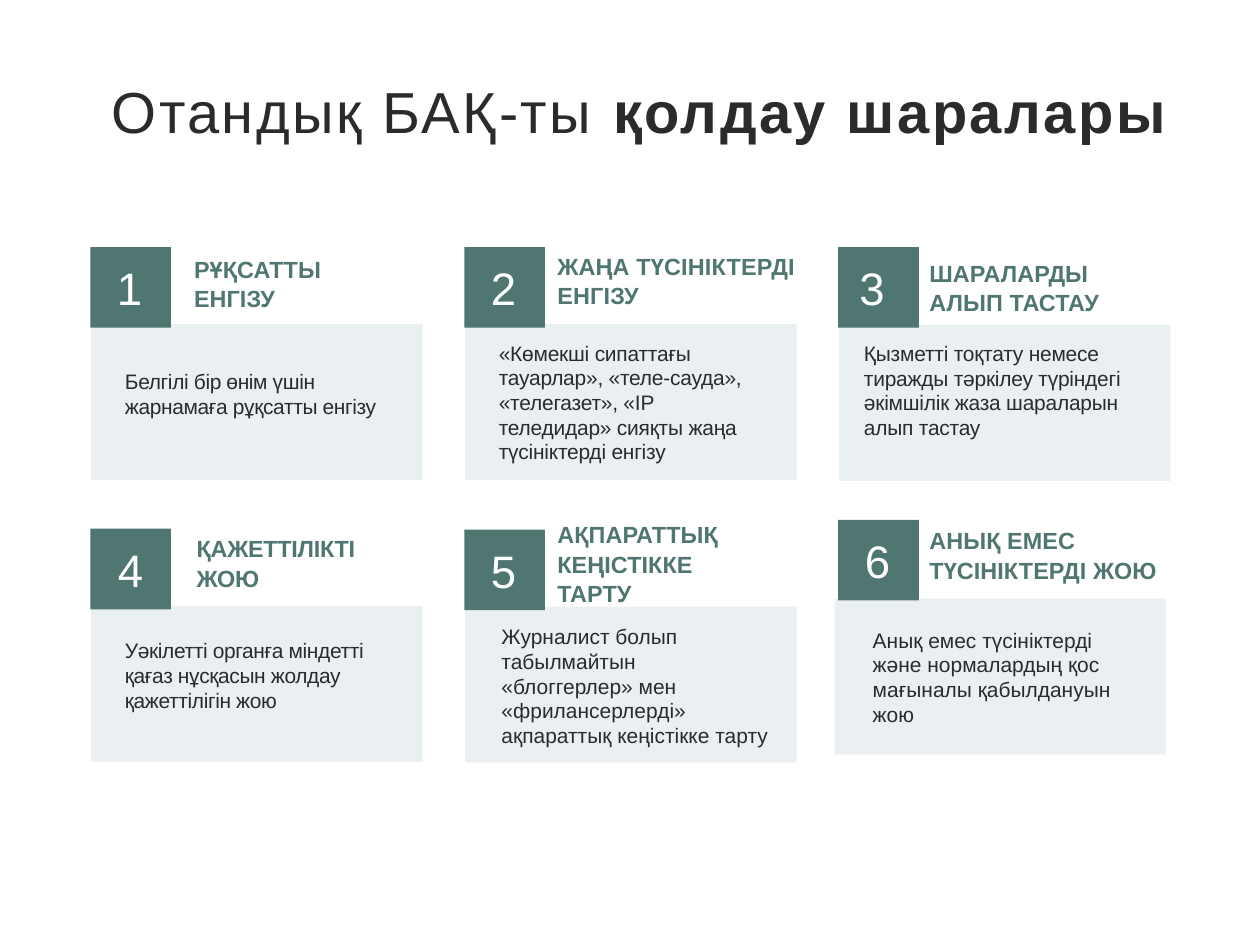
from pptx import Presentation
from pptx import util as u
from pptx.dml.color import RGBColor
from pptx.enum import shapes, text

PX = 9144
COLORS = {"panel": "EAEFF1", "accent": "4F7671", "ink": "292B2C", "white": "FFFFFF"}
SQUARE = 91
CARDS = [
    {"square": (102, 279), "panel": (103, 366), "digit": 30,
     "head": ("РҰҚСАТТЫ ЕНГІЗУ", 218, 286, 188, 67, 0.1),
     "body": ("Белгілі бір өнім үшін жарнамаға рұқсатты енгізу", 140, 417, 299, 56, -0.3)},
    {"square": (524, 279), "panel": (525, 366), "digit": 30,
     "head": ("ЖАҢА ТҮСІНІКТЕРДІ ЕНГІЗУ", 628, 283, 273, 67, 0.2),
     "body": ("«Көмекші сипаттағы тауарлар», «теле-сауда», «телегазет», «ІР теледидар» "
              "сияқты жаңа түсініктерді енгізу", 562, 385, 297, 140, -0.2)},
    {"square": (946, 279), "panel": (947, 367), "digit": 24,
     "head": ("ШАРАЛАРДЫ АЛЫП ТАСТАУ", 1048, 291, 213, 67, 0.1),
     "body": ("Қызметті тоқтату немесе тиражды тәркілеу түріндегі әкімшілік жаза "
              "шараларын алып тастау", 974, 385, 335, 112, -0.2)},
    {"square": (102, 597), "panel": (103, 684), "digit": 31,
     "head": ("ҚАЖЕТТІЛІКТІ ЖОЮ", 221, 602, 251, 65, -0.2),
     "body": ("Уәкілетті органға міндетті қағаз нұсқасын жолдау қажеттілігін жою",
              140, 721, 284, 84, -0.3)},
    {"square": (524, 598), "panel": (525, 685), "digit": 30,
     "head": ("АҚПАРАТТЫҚ КЕҢІСТІККЕ ТАРТУ", 628, 586, 222, 101, 0.1),
     "body": ("Журналист болып табылмайтын «блоггерлер» мен «фрилансерлерді» "
              "ақпараттық кеңістікке тарту", 565, 705, 307, 140, 0)},
    {"square": (946, 587), "panel": (942, 676), "digit": 30,
     "head": ("АНЫҚ ЕМЕС ТҮСІНІКТЕРДІ ЖОЮ", 1048, 593, 273, 67, 0.1),
     "body": ("Анық емес түсініктерді және нормалардың қос мағыналы қабылдануын жою",
              984, 709, 300, 114, 0)},
]


class Deck:
    font = "Arial"

    def __init__(self, width, height):
        self.prs = Presentation()
        self.prs.slide_width = width * PX
        self.prs.slide_height = height * PX
        self.s = self.prs.slides.add_slide(self.prs.slide_layouts[6])

    def box(self, x, y, w, h, color):
        sp = self.s.shapes.add_shape(
            shapes.MSO_SHAPE.RECTANGLE, x * PX, y * PX, w * PX, h * PX)
        sp.shadow.inherit = False
        sp.fill.solid()
        sp.fill.fore_color.rgb = RGBColor.from_string(COLORS[color])
        sp.line.fill.background()
        return sp

    def set_text(self, sp, runs, size, color, spacing=0, bold=None, line=None, left=1):
        tf = sp.text_frame
        tf.word_wrap = True
        tf.margin_left = left * PX
        tf.margin_top = tf.margin_right = tf.margin_bottom = 0
        p = tf.paragraphs[0]
        p.alignment = text.PP_ALIGN.LEFT
        p.line_spacing = line
        p.font.name = self.font
        p.font.size = u.Pt(size)
        p.font.bold = bold
        p.font.color.rgb = RGBColor.from_string(COLORS[color])
        for words, strong in runs:
            r = p.add_run()
            r.text = words
            if strong:
                r.font.bold = True
            if spacing:
                r._r.get_or_add_rPr().set("spc", str(round(spacing * 100)))

    def label(self, runs, x, y, w, h, spacing, **style):
        sp = self.s.shapes.add_textbox(x * PX, y * PX, w * PX, h * PX)
        self.set_text(sp, runs, spacing=spacing, **style)
        sp.text_frame.auto_size = text.MSO_AUTO_SIZE.SHAPE_TO_FIT_TEXT

    def card(self, number, card):
        self.box(*card["panel"], 374, 176, "panel")
        square = self.box(*card["square"], SQUARE, SQUARE, "accent")
        square.text_frame.vertical_anchor = text.MSO_ANCHOR.MIDDLE
        self.set_text(square, [(str(number), False)], 37, "white", -0.1, left=card["digit"])
        words, *place = card["head"]
        self.label([(words, False)], *place, size=19, color="accent", bold=True, line=1.05)
        words, *place = card["body"]
        self.label([(words, False)], *place, size=17, color="ink", line=u.Pt(20))


def main():
    deck = Deck(1422, 1067)
    deck.label([("Отандық БАҚ-ты ", False), ("қолдау шаралары", True)],
               125, 86, 1211, 79, 2, size=47, color="ink")
    for number, card in enumerate(CARDS, 1):
        deck.card(number, card)
    deck.prs.save("out.pptx")


if __name__ == "__main__":
    main()
